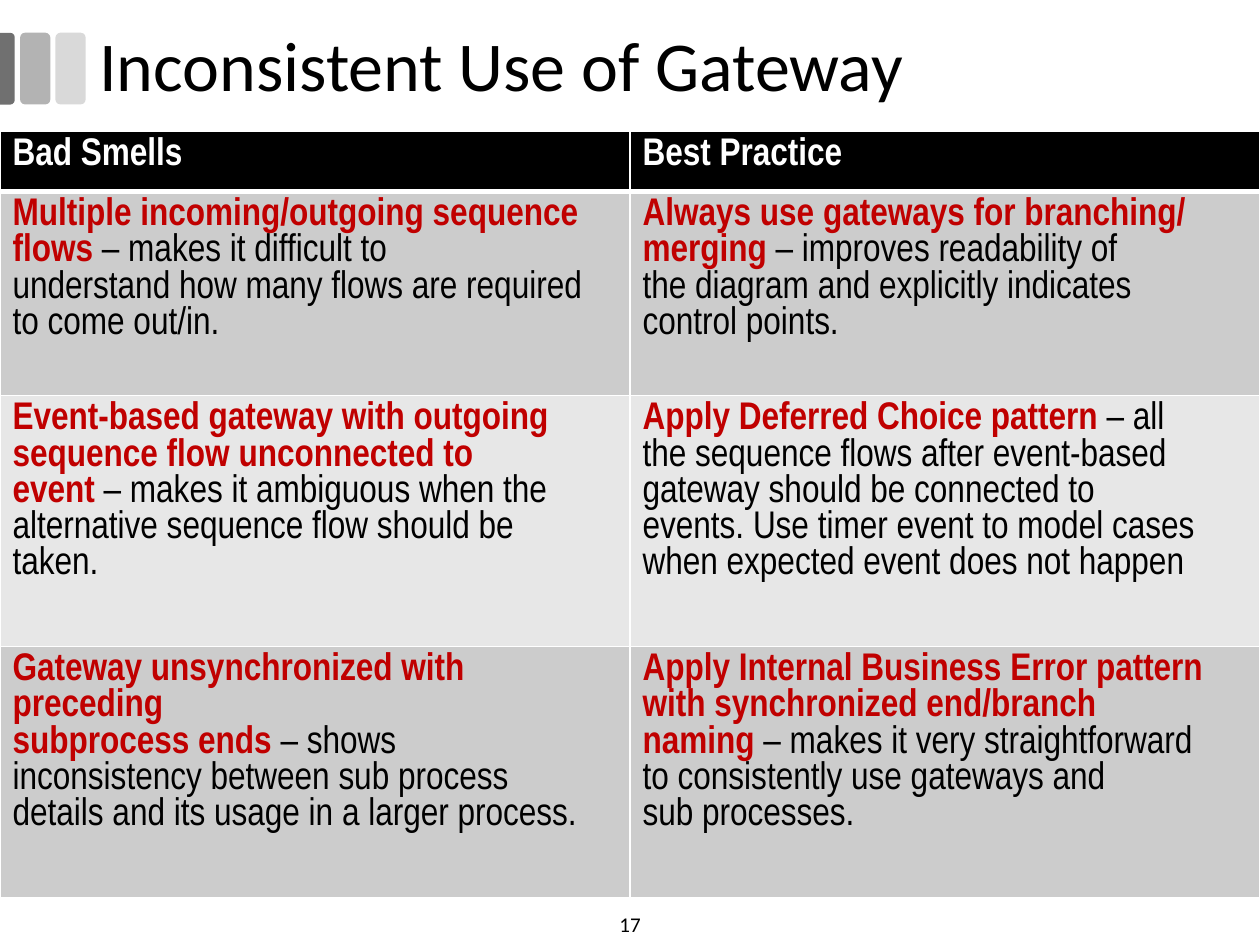
from lxml import etree
from pptx import Presentation
from pptx.dml.color import RGBColor
from pptx.enum.shapes import MSO_SHAPE as Shape
from pptx.enum.text import MSO_ANCHOR as Anchor, PP_ALIGN as Align
from pptx.oxml.ns import qn
from pptx.util import Pt

COLORS = {
    "black": "000000", "white": "FFFFFF", "red": "C00000",
    "row_dark": "CCCCCC", "row_light": "E7E7E7",
    "bar_light": "D9D9D9", "bar_mid": "B3B3B3", "bar_dark": "707070",
}
HEADERS = ["Bad Smells", "Best Practice"]
# Each cell: a bold red lead, then plain text; a line break starts a paragraph.
ROWS = [
    [("Multiple incoming/outgoing sequence\nflows ",
      "– makes it difficult to\nunderstand how many flows are required\n"
      "to come out/in."),
     ("Always use gateways for branching/\nmerging ",
      "– improves readability of\nthe diagram and explicitly indicates\n"
      "control points.")],
    [("Event-based gateway with outgoing\nsequence flow unconnected to\nevent ",
      "– makes it ambiguous when the\nalternative sequence flow should be\n"
      "taken."),
     ("Apply Deferred Choice pattern ",
      "– all\nthe sequence flows after event-based\n"
      "gateway should be connected to\n"
      "events. Use timer event to model cases\n"
      "when expected event does not happen")],
    [("Gateway unsynchronized with preceding\nsubprocess ends ",
      "– shows\ninconsistency between sub process\n"
      "details and its usage in a larger process."),
     ("Apply Internal Business Error pattern\nwith synchronized end/branch\nnaming ",
      "– makes it very straightforward\nto consistently use gateways and\n"
      "sub processes.")],
]
ROW_HEIGHTS = [34.5, 116.6, 143.4, 143.4]
ROW_FILLS = ["black", "row_dark", "row_light", "row_dark"]


def add_run(paragraph, text, size, font_name, color, bold=False):
    run = paragraph.add_run()
    run.text = text
    run.font.size = Pt(size)
    run.font.name = font_name
    run.font.bold = bold
    run.font.color.rgb = RGBColor.from_string(COLORS[color])


def set_borders(cell, bottom_width):
    """Draw white lines around a cell, 1 pt except at the bottom."""
    properties = cell._tc.get_or_add_tcPr()
    for side, width in (("L", 1), ("R", 1), ("T", 1), ("B", bottom_width)):
        line = etree.SubElement(properties, qn(f"a:ln{side}"), w=str(Pt(width)))
        fill = etree.SubElement(line, qn("a:solidFill"))
        etree.SubElement(fill, qn("a:srgbClr"), val=COLORS["white"])


presentation = Presentation()
presentation.slide_width, presentation.slide_height = Pt(720), Pt(540)
slide = presentation.slides.add_slide(presentation.slide_layouts[6])

# Bars at the left of the title; the darkest is turned to round its right side
bars = [
    (Shape.ROUNDED_RECTANGLE, 31.7, 18.7, 17.3, 41, 0, "bar_light"),
    (Shape.ROUNDED_RECTANGLE, 11.5, 18.7, 17.3, 41, 0, "bar_mid"),
    (Shape.ROUND_2_SAME_RECTANGLE, -16.4, 35, 41, 8.6, 90, "bar_dark"),
]
for kind, left, top, width, height, rotation, color in bars:
    bar = slide.shapes.add_shape(kind, Pt(left), Pt(top), Pt(width), Pt(height))
    bar.shadow.inherit = False
    bar.rotation = rotation
    bar.fill.solid()
    bar.fill.fore_color.rgb = RGBColor.from_string(COLORS[color])
    bar.line.fill.background()
bar.adjustments[0] = 0.29

# Title and slide number
labels = [
    ("Inconsistent Use of Gateway", 49.7, 12.2, 670, 54, 40, Align.LEFT, 0.9),
    ("17", 279, 516.2, 162, 24, 12, Align.CENTER, 1.0),
]
for text, left, top, width, height, size, alignment, spacing in labels:
    box = slide.shapes.add_textbox(Pt(left), Pt(top), Pt(width), Pt(height))
    box.text_frame.word_wrap = True
    box.text_frame.vertical_anchor = Anchor.MIDDLE
    paragraph = box.text_frame.paragraphs[0]
    paragraph.alignment = alignment
    paragraph.line_spacing = spacing
    add_run(paragraph, text, size, "Calibri", "black")

# Table of bad smells and best practices
table = slide.shapes.add_table(
    len(ROWS) + 1, len(HEADERS), Pt(0), Pt(75), Pt(720), Pt(sum(ROW_HEIGHTS))
).table
for row, height in zip(table.rows, ROW_HEIGHTS):
    row.height = Pt(height)

for row_index, fill_color in enumerate(ROW_FILLS):
    for column_index, header in enumerate(HEADERS):
        cell = table.cell(row_index, column_index)
        set_borders(cell, 3 if row_index == 0 else 1)
        cell.fill.solid()
        cell.fill.fore_color.rgb = RGBColor.from_string(COLORS[fill_color])
        if row_index == 0:
            parts = [(header, "white", True)]
        else:
            lead, detail = ROWS[row_index - 1][column_index]
            parts = [(lead, "red", True), (detail, "black", False)]
        paragraph = cell.text_frame.paragraphs[0]
        for text, color, bold in parts:
            for line_index, line_text in enumerate(text.split("\n")):
                if line_index > 0:
                    paragraph = cell.text_frame.add_paragraph()
                add_run(paragraph, line_text, 22, "Arial Narrow", color, bold)

presentation.save("out.pptx")
